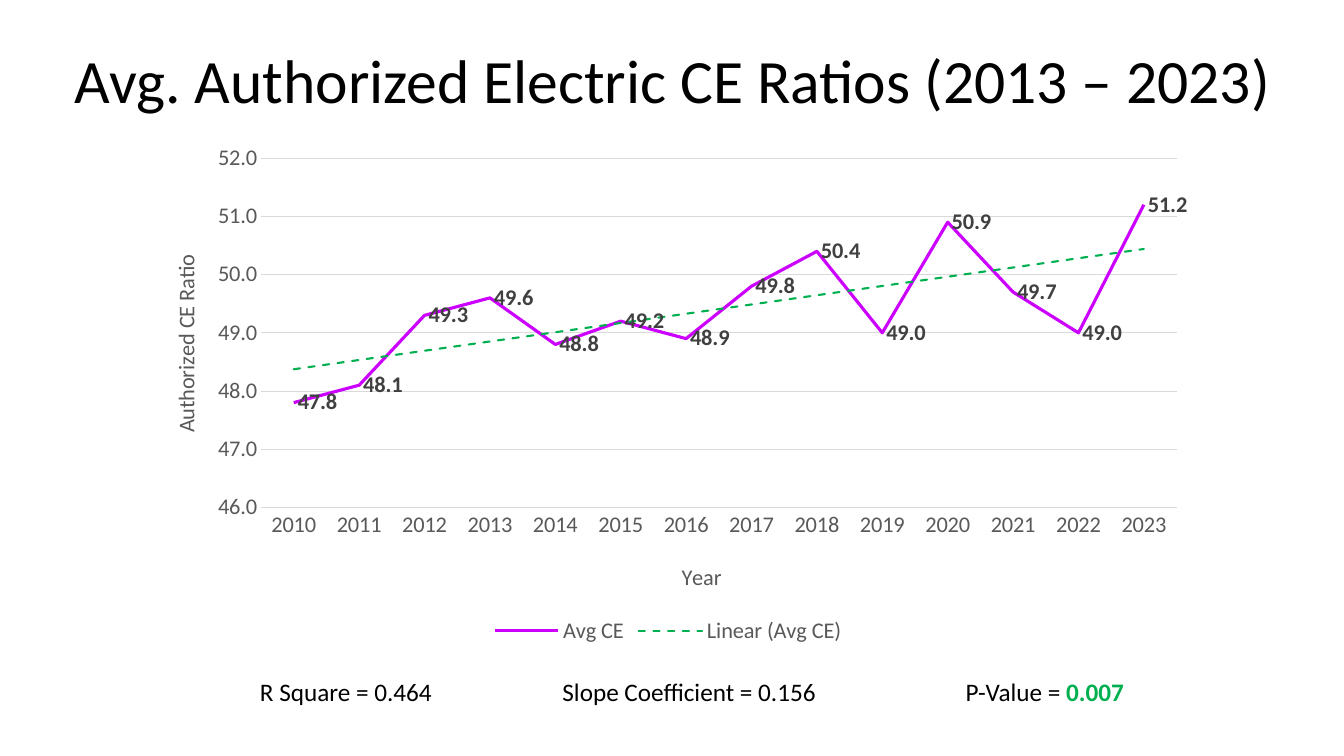
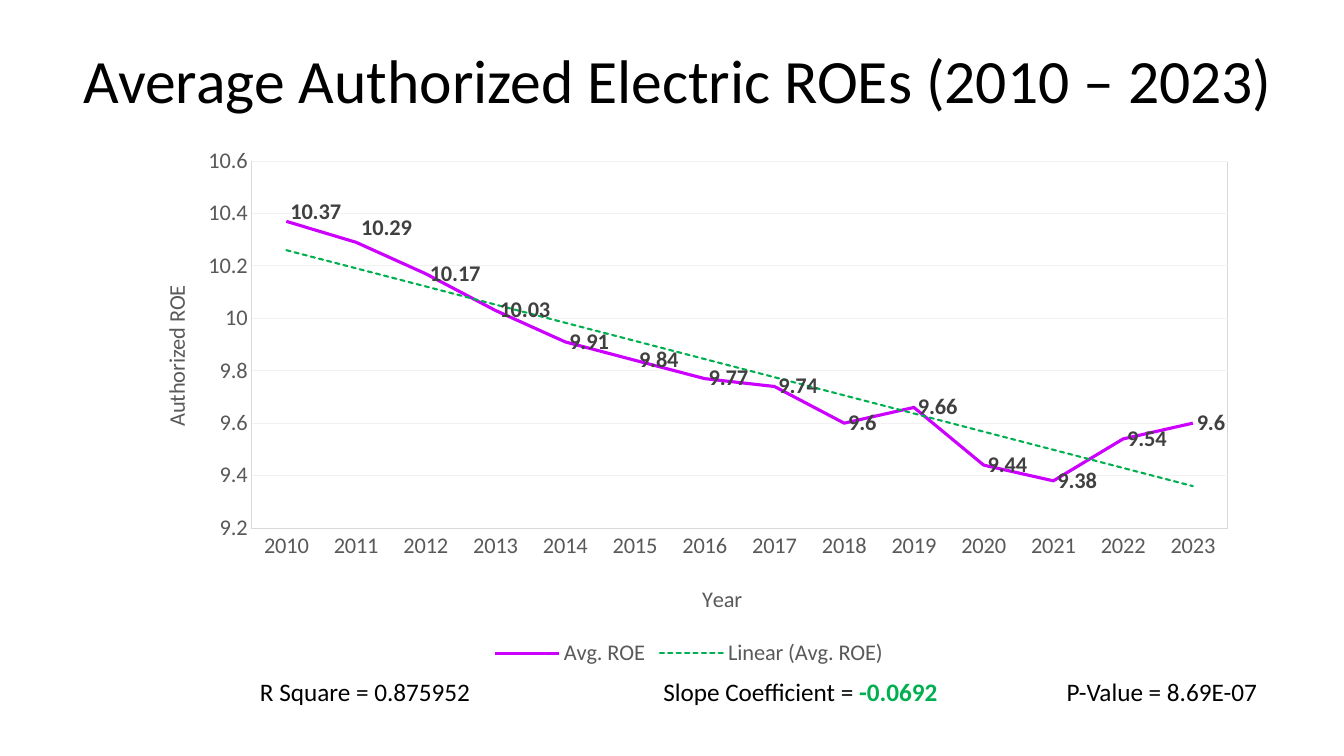
from dataclasses import dataclass
from typing import Optional

from pptx import Presentation
from pptx.chart.data import CategoryChartData
from pptx.dml.color import RGBColor
from pptx.enum import chart as ce, dml, text as te
from pptx.oxml import parse_xml
from pptx.oxml.ns import nsdecls
from pptx.util import Inches, Pt

FONT = "Calibri"
BLACK = RGBColor(0x00, 0x00, 0x00)
WHITE = RGBColor(0xFF, 0xFF, 0xFF)
GREEN = RGBColor(0x00, 0xB0, 0x50)
PURPLE = RGBColor(0xCC, 0x00, 0xFF)
AXIS_GRAY = RGBColor(0x59, 0x59, 0x59)
LABEL_GRAY = RGBColor(0x40, 0x40, 0x40)
RULE_GRAY = RGBColor(0xD9, 0xD9, 0xD9)
PALE_GRAY = RGBColor(0xF2, 0xF2, 0xF2)
YEARS = [str(year) for year in range(2010, 2024)]
CHART_TEXT = 16

Box = tuple[float, float, float, float]
Point = tuple[float, float]


@dataclass(frozen=True)
class Statistic:
    name: str
    value: str
    highlighted: bool = False


@dataclass(frozen=True)
class Trend:
    """One slide; boxes are in inches, plot and title places in chart fractions."""
    title: str
    title_box: Box
    chart_box: Box
    plot: Box
    year_at: Point
    measure_at: Point
    measure: str
    series: str
    values: tuple[float, ...]
    scale: tuple[float, float, float]
    number_format: str
    grid: RGBColor
    dash: str
    statistics: tuple[Statistic, ...]
    tab_stops: tuple[float, ...]
    label_shifts: tuple[Point, ...] = ()
    plot_border: Optional[RGBColor] = None


TRENDS = (
    Trend(
        title="Avg. Authorized Electric CE Ratios (2013 – 2023)",
        title_box=(0.64, 0, 12.08, 1.65),
        chart_box=(1.37, 1.33, 10.51, 5.11),
        plot=(0.116, 0.047, 0.864, 0.678),
        year_at=(0.509, 0.823),
        measure_at=(0.027, 0.227),
        measure="Authorized CE Ratio",
        series="Avg CE",
        values=(47.8, 48.1, 49.3, 49.6, 48.8, 49.2, 48.9,
                49.8, 50.4, 49.0, 50.9, 49.7, 49.0, 51.2),
        scale=(46, 52, 1),
        number_format="0.0",
        grid=RULE_GRAY,
        dash="dash",
        statistics=(Statistic("R Square", "0.464"),
                    Statistic("Slope Coefficient", "0.156"),
                    Statistic("P-Value", "0.007", True)),
        tab_stops=(3, 7),
    ),
    Trend(
        title="Average Authorized Electric ROEs (2010 – 2023)",
        title_box=(0.68, 0, 12.1, 1.65),
        chart_box=(1.27, 1.36, 11.13, 5.3),
        plot=(0.11, 0.045, 0.87, 0.687),
        year_at=(0.508, 0.828),
        measure_at=(0.026, 0.27),
        measure="Authorized ROE",
        series="Avg. ROE",
        values=(10.37, 10.29, 10.17, 10.03, 9.91, 9.84, 9.77,
                9.74, 9.6, 9.66, 9.44, 9.38, 9.54, 9.6),
        scale=(9.2, 10.6, 0.2),
        number_format="General",
        grid=PALE_GRAY,
        dash="sysDash",
        statistics=(Statistic("R Square", "0.875952"),
                    Statistic("Slope Coefficient", "-0.0692", True),
                    Statistic("P-Value", "8.69E-07")),
        tab_stops=(4, 8),
        label_shifts=((0, -0.017), (0.001, -0.026)),
        plot_border=RULE_GRAY,
    ),
)


def set_font(font, size: float, color: RGBColor, bold: bool = False) -> None:
    font.name = FONT
    font.size = Pt(size)
    font.bold = bold
    font.color.rgb = color


def add_run(paragraph, text: str, *, size: float = 18,
            color: RGBColor = BLACK, bold: bool = False) -> None:
    run = paragraph.add_run()
    run.text = text
    set_font(run.font, size, color, bold)


def set_line(line, color: RGBColor, width: float = 0.75) -> None:
    line.color.rgb = color
    line.width = Pt(width)


def place(parent, index: int, x: float, y: float,
          size: Optional[Point] = None, absolute: bool = True) -> None:
    """Give a chart part a manual layout, as the child at the given index."""
    for old in parent.xpath("c:layout"):
        parent.remove(old)
    target = '<c:layoutTarget val="inner"/>' if size else ""
    modes = '<c:xMode val="edge"/><c:yMode val="edge"/>' if absolute else ""
    extent = f'<c:w val="{size[0]}"/><c:h val="{size[1]}"/>' if size else ""
    parent.insert(index, parse_xml(
        f'<c:layout {nsdecls("c")}><c:manualLayout>{target}{modes}'
        f'<c:x val="{x}"/><c:y val="{y}"/>{extent}'
        '</c:manualLayout></c:layout>'))


def format_axis(axis, title: str, title_at: Point) -> None:
    axis.major_tick_mark = axis.minor_tick_mark = ce.XL_TICK_MARK.NONE
    set_font(axis.tick_labels.font, CHART_TEXT, AXIS_GRAY)
    add_run(axis.axis_title.text_frame.paragraphs[0], title,
            size=CHART_TEXT, color=AXIS_GRAY)
    place(axis.axis_title._element, 1, *title_at)


def add_trendline(series, dash: str) -> None:
    trendline = parse_xml(
        f'<c:trendline {nsdecls("c", "a")}><c:spPr>'
        f'<a:ln w="{Pt(1.5)}" cap="rnd"><a:solidFill><a:srgbClr val="{GREEN}"/>'
        f'</a:solidFill><a:prstDash val="{dash}"/></a:ln></c:spPr>'
        '<c:trendlineType val="linear"/><c:dispRSqr val="0"/>'
        '<c:dispEq val="0"/></c:trendline>')
    series._element.xpath("c:cat")[0].addprevious(trendline)


def format_labels(series, trend: Trend) -> None:
    labels = series.data_labels
    labels.show_value = True
    labels.position = ce.XL_LABEL_POSITION.RIGHT
    labels.number_format = trend.number_format
    labels.number_format_is_linked = False
    set_font(labels.font, CHART_TEXT, LABEL_GRAY, bold=True)
    for index, shift in enumerate(trend.label_shifts):
        label = series.points[index].data_label
        set_font(label.font, CHART_TEXT, LABEL_GRAY, bold=True)
        label.position = ce.XL_LABEL_POSITION.RIGHT
        place(series._element.xpath("c:dLbls/c:dLbl")[index], 1, *shift,
              absolute=False)


def format_plot_area(chart, trend: Trend) -> None:
    area = chart._chartSpace.xpath("c:chart/c:plotArea")[0]
    x, y, width, height = trend.plot
    place(area, 0, x, y, (width, height))
    if trend.plot_border is not None:
        area.append(parse_xml(
            f'<c:spPr {nsdecls("c", "a")}><a:solidFill><a:srgbClr val="{WHITE}"/>'
            f'</a:solidFill><a:ln w="{Pt(0.75)}"><a:solidFill>'
            f'<a:srgbClr val="{trend.plot_border}"/></a:solidFill></a:ln></c:spPr>'))


def add_trend_chart(slide, trend: Trend) -> None:
    data = CategoryChartData(number_format=trend.number_format)
    data.categories = YEARS
    data.add_series(trend.series, trend.values)
    chart = slide.shapes.add_chart(
        ce.XL_CHART_TYPE.LINE, *map(Inches, trend.chart_box), data).chart
    set_font(chart.font, CHART_TEXT, BLACK)
    chart.has_title = False
    chart.has_legend = True
    chart.legend.position = ce.XL_LEGEND_POSITION.BOTTOM
    chart.legend.include_in_layout = False
    set_font(chart.legend.font, CHART_TEXT, AXIS_GRAY)

    years, measure = chart.category_axis, chart.value_axis
    format_axis(years, "Year", trend.year_at)
    set_line(years.format.line, RULE_GRAY)
    format_axis(measure, trend.measure, trend.measure_at)
    measure.axis_title._element.xpath(".//a:bodyPr")[0].set("rot", "-5400000")
    measure.format.line.fill.background()
    measure.minimum_scale, measure.maximum_scale, measure.major_unit = trend.scale
    measure.tick_labels.number_format = trend.number_format
    measure.tick_labels.number_format_is_linked = False
    set_line(measure.major_gridlines.format.line, trend.grid)

    chart.plots[0].vary_by_categories = False
    series = chart.plots[0].series[0]
    series.smooth = False
    series.marker.style = ce.XL_MARKER_STYLE.NONE
    set_line(series.format.line, PURPLE, 2.25)
    series.format.line.dash_style = dml.MSO_LINE.SOLID
    format_labels(series, trend)
    add_trendline(series, trend.dash)
    format_plot_area(chart, trend)


def add_title(slide, trend: Trend) -> None:
    title = slide.shapes.title
    title.left, title.top, title.width, title.height = map(Inches, trend.title_box)
    frame = title.text_frame
    frame.auto_size = te.MSO_AUTO_SIZE.NONE
    frame.vertical_anchor = te.MSO_ANCHOR.MIDDLE
    paragraph = frame.paragraphs[0]
    paragraph.alignment = te.PP_ALIGN.CENTER
    paragraph.line_spacing = 0.9
    add_run(paragraph, trend.title, size=44)


def add_statistics(slide, trend: Trend) -> None:
    frame = slide.shapes.add_textbox(
        Inches(2.48), Inches(6.66), Inches(10.31), Inches(0.4)).text_frame
    frame.word_wrap = True
    frame.auto_size = te.MSO_AUTO_SIZE.SHAPE_TO_FIT_TEXT
    paragraph = frame.paragraphs[0]
    stops = "".join(f'<a:tab pos="{Inches(stop)}" algn="l"/>'
                    for stop in trend.tab_stops)
    paragraph._p.get_or_add_pPr().append(
        parse_xml(f'<a:tabLst {nsdecls("a")}>{stops}</a:tabLst>'))
    for index, statistic in enumerate(trend.statistics):
        gap = "\t" if index else ""
        add_run(paragraph, f"{gap}{statistic.name} = ")
        add_run(paragraph, statistic.value, bold=statistic.highlighted,
                color=GREEN if statistic.highlighted else BLACK)


def main() -> None:
    deck = Presentation()
    deck.slide_width, deck.slide_height = Inches(13.33), Inches(7.5)
    title_only = deck.slide_layouts[5]
    for trend in TRENDS:
        slide = deck.slides.add_slide(title_only)
        add_title(slide, trend)
        add_statistics(slide, trend)
        add_trend_chart(slide, trend)
    deck.save("out.pptx")


if __name__ == "__main__":
    main()
